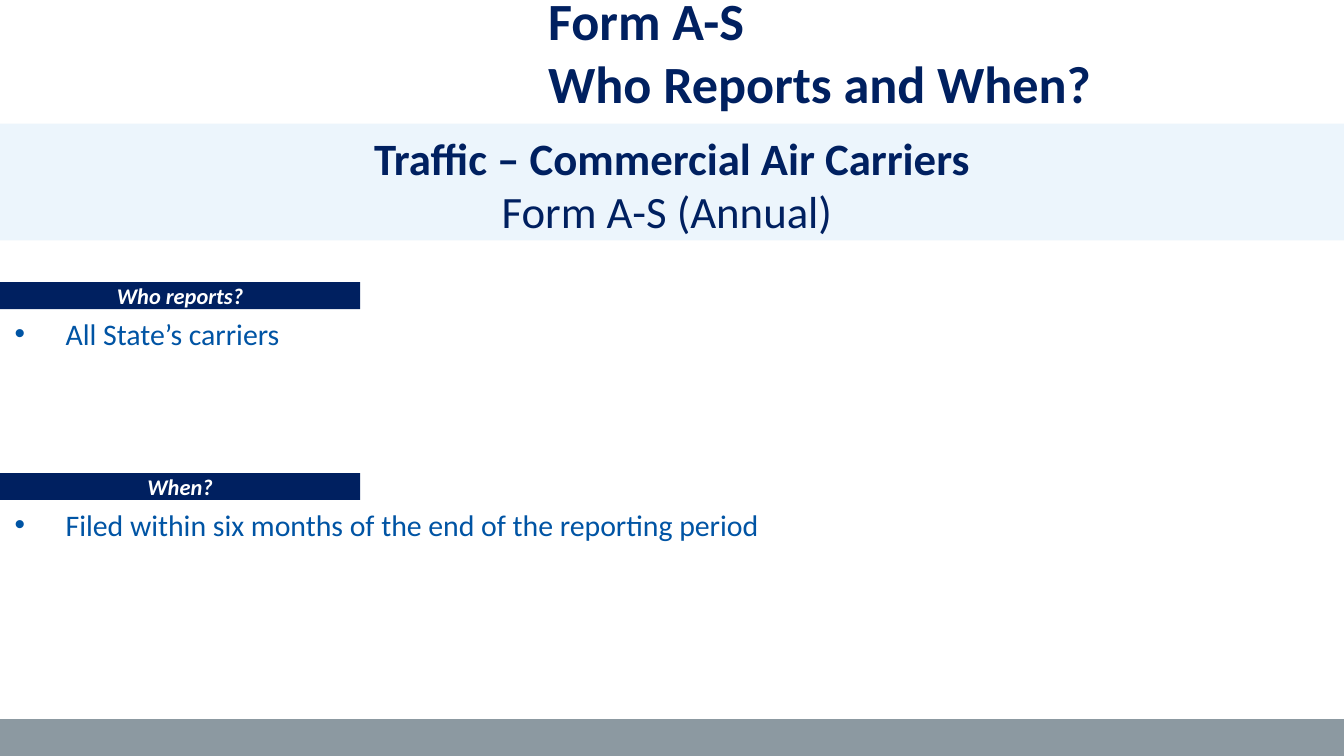
"""Build the Form A-S slide on who reports and when."""
import dataclasses

import pptx
import pptx.dml.color
import pptx.enum.shapes
import pptx.enum.text
import pptx.oxml
import pptx.oxml.ns
import pptx.util

Inches = pptx.util.Inches
Align = pptx.enum.text.PP_ALIGN
Anchor = pptx.enum.text.MSO_ANCHOR


@dataclasses.dataclass(frozen=True)
class Theme:
    """Font, colours and type sizes of the slide."""
    font: str = "Calibri"
    navy: str = "002060"
    blue: str = "0054A4"
    pale: str = "ECF5FC"
    grey: str = "8C99A1"
    white: str = "FFFFFF"
    heading: int = 28
    title: int = 24
    body: int = 16
    label: int = 12


THEME = Theme()


def rgb(code):
    """Turn a hex code into a colour."""
    return pptx.dml.color.RGBColor.from_string(code)


def add_bar(page, left, top, width, height, fill):
    """Add a plain filled rectangle without outline or shadow."""
    bar = page.shapes.add_shape(
        pptx.enum.shapes.MSO_SHAPE.RECTANGLE,
        Inches(left), Inches(top), Inches(width), Inches(height))
    bar.shadow.inherit = False
    bar.fill.solid()
    bar.fill.fore_color.rgb = rgb(fill)
    bar.line.fill.background()
    return bar


def write(shape, text, size, color, bold=False, italic=False,
          align=Align.LEFT, anchor=Anchor.TOP):
    """Put styled text into a shape and return its paragraphs."""
    frame = shape.text_frame
    frame.word_wrap = True
    frame.vertical_anchor = anchor
    frame.text = text
    for paragraph in frame.paragraphs:
        paragraph.alignment = align
        for span in paragraph.runs:
            span.font.name = THEME.font
            span.font.size = pptx.util.Pt(size)
            span.font.color.rgb = rgb(color)
            span.font.bold = bold
            span.font.italic = italic
    return frame.paragraphs


def add_heading(page, left, top, width, height):
    """Add the two-line heading at the top of the page."""
    box = page.shapes.add_textbox(
        Inches(left), Inches(top), Inches(width), Inches(height))
    write(box, "Form A-S\nWho Reports and When?", THEME.heading, THEME.navy,
          bold=True, anchor=Anchor.MIDDLE)


def add_title_band(page, left, top, width, height):
    """Add the pale band naming the form."""
    band = add_bar(page, left, top, width, height, THEME.pale)
    paragraphs = write(
        band, "Traffic – Commercial Air Carriers\vForm A-S (Annual) ",
        THEME.title, THEME.navy, bold=True, align=Align.CENTER)
    paragraphs[0].runs[1].font.bold = False


def add_section(page, left, top, width, height, question, answer):
    """Add a question label with its bulleted answer below."""
    label_width, label_height = 2.68, 0.2
    label = add_bar(page, left, top, label_width, label_height, THEME.navy)
    write(label, question, THEME.label, THEME.white, bold=True, italic=True,
          align=Align.CENTER, anchor=Anchor.MIDDLE)
    box = page.shapes.add_textbox(
        Inches(left + 0.01), Inches(top + label_height),
        Inches(width), Inches(height - label_height))
    paragraph = write(box, answer, THEME.body, THEME.blue)[0]
    properties = paragraph._p.get_or_add_pPr()
    properties.set("marL", str(Inches(0.38)))
    properties.set("indent", str(-Inches(0.38)))
    properties.append(pptx.oxml.parse_xml(
        f'<a:buFont {pptx.oxml.ns.nsdecls("a")} typeface="Arial"/>'))
    properties.append(pptx.oxml.parse_xml(
        f'<a:buChar {pptx.oxml.ns.nsdecls("a")} char="•"/>'))


def main():
    """Build the slide and save the deck."""
    page_width, footer_top = 10, 5.35
    page_height = page_width * 9 / 16
    deck = pptx.Presentation()
    deck.slide_width = Inches(page_width)
    deck.slide_height = Inches(page_height)
    page = deck.slides.add_slide(deck.slide_layouts[6])
    add_bar(page, 0, footer_top, page_width, page_height - footer_top, THEME.grey)
    add_title_band(page, 0, 0.92, page_width, 0.87)
    add_heading(page, 3.98, -0.04, 6.02, 0.84)
    sections = (
        ("Who reports?", "All State’s carriers"),
        ("When?", "Filed within six months of the end of the reporting period"),
    )
    pitch = 1.42
    for index, (question, answer) in enumerate(sections):
        add_section(page, 0, 2.1 + index * pitch, 9.88, pitch, question, answer)
    deck.save("out.pptx")


if __name__ == "__main__":
    main()
